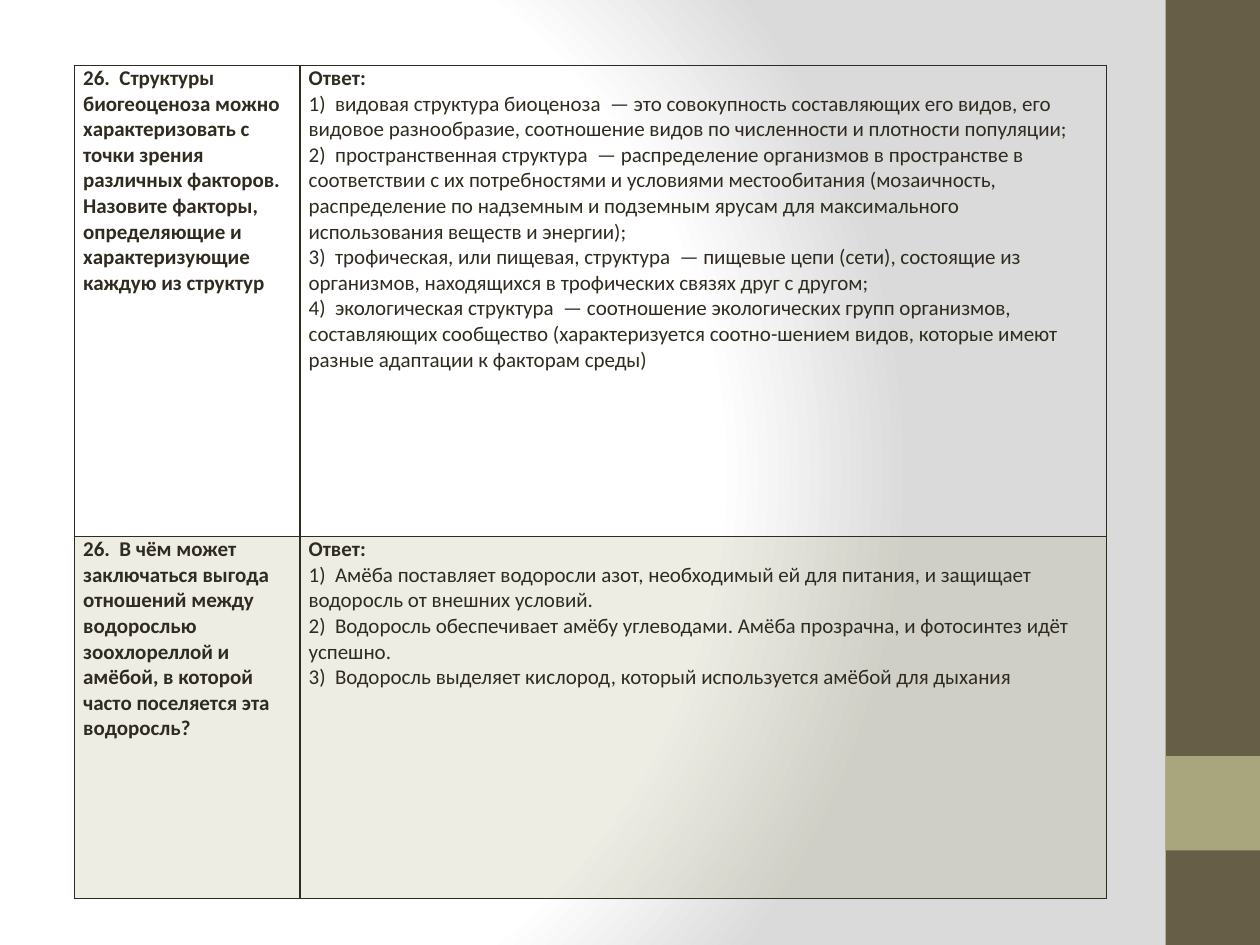
from dataclasses import dataclass

from lxml import etree
from pptx import Presentation
from pptx import util as u
from pptx.dml.color import RGBColor
from pptx.enum import shapes
from pptx.oxml import parse_xml
from pptx.oxml.ns import nsdecls, qn

INK, OLIVE, DARK_OLIVE = "2F2B20", "A9A57C", "675E47"
BACKDROP_STOPS = [(0, "FFFFFF"), (75, "FFFFFF"), (100, "DADADA")]


@dataclass
class Band:
    top: float
    height: float
    color: str


@dataclass
class Entry:
    question: str
    answers: list[str]
    height: float
    shaded: bool = False
    space_after: float = 0


BANDS = [Band(0, 7.5, DARK_OLIVE), Band(6, 0.75, OLIVE)]

ENTRIES = [
    Entry(
        "26.  Структуры биогеоценоза можно характеризовать с точки зрения "
        "различных факторов. Назовите факторы, определяющие и "
        "характеризующие каждую из структур",
        [
            "1)  видовая структура биоценоза  — это совокупность составляющих "
            "его видов, его видовое разнообразие, соотношение видов по "
            "численности и плотности популяции;",
            "2)  пространственная структура  — распределение организмов в "
            "пространстве в соответствии с их потребностями и условиями "
            "местообитания (мозаичность, распределение по надземным и подземным "
            "ярусам для максимального использования веществ и энергии);",
            "3)  трофическая, или пищевая, структура  — пищевые цепи (сети), "
            "состоящие из организмов, находящихся в трофических связях друг с "
            "другом;",
            "4)  экологическая структура  — соотношение экологических групп "
            "организмов, составляющих сообщество (характеризуется соотно-шением "
            "видов, которые имеют разные адаптации к факторам среды)",
        ],
        height=3.74,
    ),
    Entry(
        "26.  В чём может заключаться выгода отношений между водорослью "
        "зоохлореллой и амёбой, в которой часто поселяется эта водоросль?",
        [
            "1)  Амёба поставляет водоросли азот, необходимый ей для питания, и "
            "защищает водоросль от внешних условий.",
            "2)  Водоросль обеспечивает амёбу углеводами. Амёба прозрачна, и "
            "фотосинтез идёт успешно.",
            "3)  Водоросль выделяет кислород, который используется амёбой для "
            "дыхания",
        ],
        height=2.87,
        shaded=True,
        space_after=3.8,
    ),
]


def rgb(color: str) -> RGBColor:
    return RGBColor.from_string(color)


def paint_backdrop(slide) -> None:
    slide.background.fill.solid()
    solid = slide.element.find(".//" + qn("p:bgPr")).find(qn("a:solidFill"))
    stops = "".join(
        f'<a:gs pos="{position * 1000}"><a:srgbClr val="{color}"/></a:gs>'
        for position, color in BACKDROP_STOPS
    )
    gradient = parse_xml(
        f'<a:gradFill {nsdecls("a")} rotWithShape="1"><a:gsLst>{stops}</a:gsLst>'
        '<a:path path="circle"><a:fillToRect l="20000" t="50000" r="100000" '
        'b="50000"/></a:path></a:gradFill>'
    )
    solid.getparent().replace(solid, gradient)


def draw_band(slide, band: Band) -> None:
    bar = slide.shapes.add_shape(
        shapes.MSO_SHAPE.RECTANGLE,
        u.Inches(9.25), u.Inches(band.top), u.Inches(0.75), u.Inches(band.height),
    )
    bar.shadow.inherit = False
    bar.fill.solid()
    bar.fill.fore_color.rgb = rgb(band.color)
    bar.line.fill.background()


def style_cell(cell, shaded: bool) -> None:
    cell.margin_left = cell.margin_right = u.Inches(0.07)
    cell.margin_top = cell.margin_bottom = 0
    properties = cell._tc.get_or_add_tcPr()
    for side in "LRTB":
        properties.append(parse_xml(
            f'<a:ln{side} {nsdecls("a")} w="{u.Pt(1)}"><a:solidFill>'
            f'<a:srgbClr val="{INK}"/></a:solidFill></a:ln{side}>'
        ))
    if shaded:
        cell.fill.solid()
        cell.fill.fore_color.rgb = rgb(OLIVE)
        tint = properties.find(qn("a:solidFill")).find(qn("a:srgbClr"))
        etree.SubElement(tint, qn("a:alpha"), val="20000")
    else:
        cell.fill.background()


def write_cell(cell, lines: list[str], space_after: float = 0) -> None:
    """Write one paragraph per line; the first one is bold."""
    frame = cell.text_frame
    frame.text = "\n".join(lines)
    for index, paragraph in enumerate(frame.paragraphs):
        font = paragraph.font
        font.name, font.size, font.bold = "Calibri", u.Pt(12), index == 0
        font.color.rgb = rgb(INK)
        paragraph.space_after = u.Pt(space_after)


def draw_entries(slide, entries: list[Entry]) -> None:
    widths = [1.79, 6.4]
    table = slide.shapes.add_table(
        len(entries), len(widths), u.Inches(0.59), u.Inches(0.52),
        u.Inches(sum(widths)), u.Inches(sum(entry.height for entry in entries)),
    ).table
    table.first_row = table.horz_banding = False
    for column, width in zip(table.columns, widths):
        column.width = u.Inches(width)
    for row, entry in zip(table.rows, entries):
        row.height = u.Inches(entry.height)
        question, answer = row.cells
        for cell in (question, answer):
            style_cell(cell, entry.shaded)
        write_cell(question, [entry.question], entry.space_after)
        write_cell(answer, ["Ответ:", *entry.answers])


def main() -> None:
    deck = Presentation()
    deck.slide_width, deck.slide_height = u.Inches(10), u.Inches(7.5)
    slide = deck.slides.add_slide(deck.slide_layouts[6])

    # Backdrop and side bands
    paint_backdrop(slide)
    for band in BANDS:
        draw_band(slide, band)

    # Questions and answers
    draw_entries(slide, ENTRIES)

    deck.save("out.pptx")


if __name__ == "__main__":
    main()
